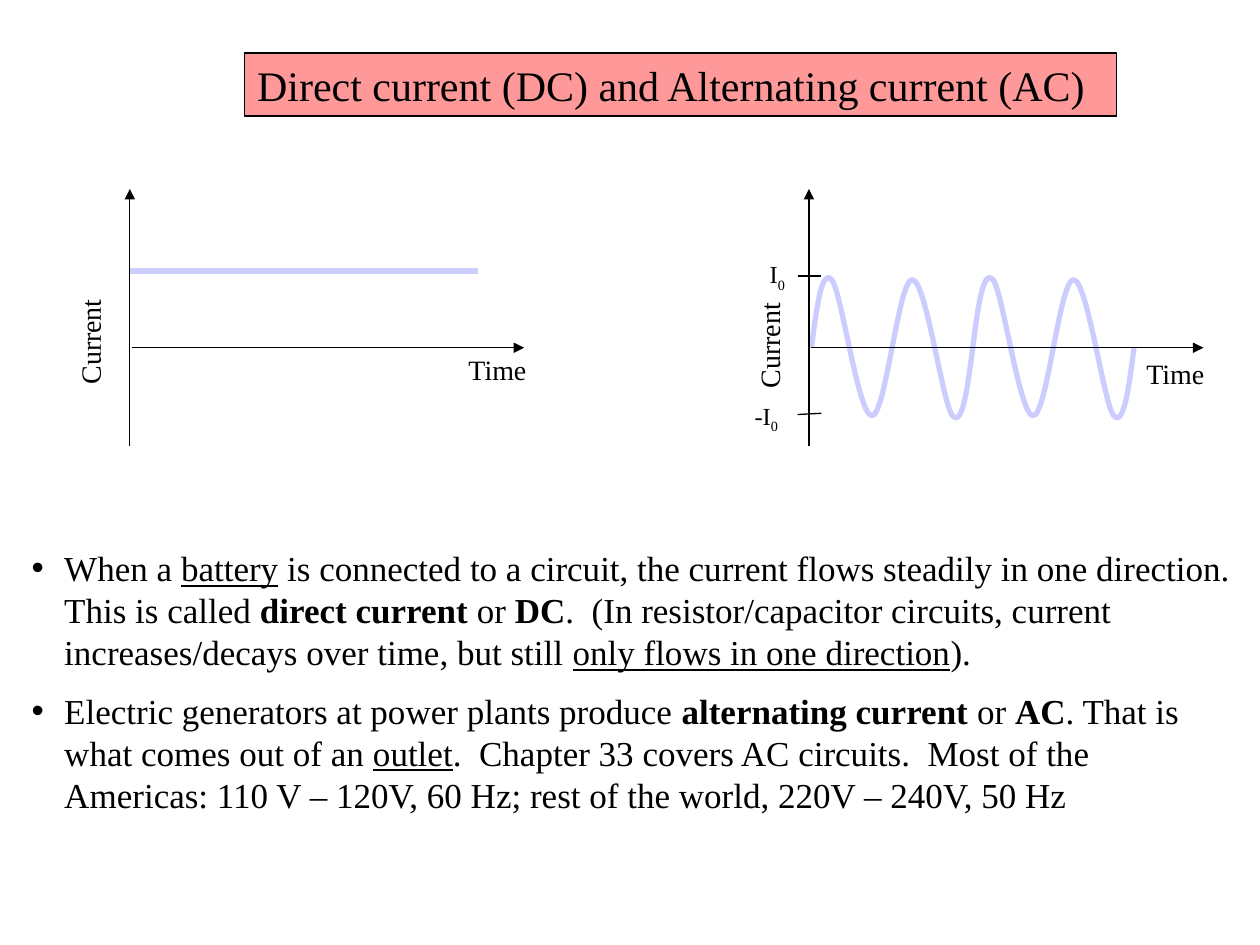
from dataclasses import dataclass
from typing import Any

import lxml.etree
import pptx
import pptx.dml.color
import pptx.enum.shapes
import pptx.enum.text
import pptx.oxml.ns
import pptx.util

Inches = pptx.util.Inches
Pt = pptx.util.Pt
qn = pptx.oxml.ns.qn

BLACK = pptx.dml.color.RGBColor(0x00, 0x00, 0x00)
PINK = pptx.dml.color.RGBColor(0xFF, 0x99, 0x99)
LAVENDER = pptx.dml.color.RGBColor(0xCC, 0xCC, 0xFF)

FONT = "Times New Roman"
ZERO_Y = 2.76
PERIOD = 1.28
WAVE_CONTROLS = (
    (0.04, -0.31), (0.08, -0.63), (0.16, -0.54),
    (0.24, -0.45), (0.37, 0.54), (0.48, 0.54),
    (0.59, 0.54), (0.69, -0.54), (0.80, -0.54),
    (0.91, -0.54), (1.04, 0.45), (1.12, 0.54),
    (1.20, 0.63), (1.24, 0.31), (1.28, 0),
)


@dataclass
class Span:
    text: str
    format: dict[str, Any]
    subscript: bool = False


@dataclass
class Graph:
    axis_x: float
    time_x: float
    label_shift: float


@dataclass
class Level:
    sign: str
    tick_start_y: float
    tick_end_y: float
    label_x: float
    label_y: float
    label_width: float


PLAIN: dict[str, Any] = {}
BOLD = {"bold": True}
UNDERLINED = {"underline": True}

DIRECT = Graph(1.03, 3.62, 0)
ALTERNATING = Graph(6.42, 9, 0.03)
LEVELS = (
    Level("", 2.19, 2.19, 6.01, 2.01, 0.41),
    Level("-", 3.29, 3.28, 5.89, 3.13, 0.44),
)
TITLE = [Span("Direct current (DC) and Alternating current (AC)", PLAIN)]
BULLETS = (
    [
        Span("When a ", PLAIN),
        Span("battery", UNDERLINED),
        Span(" is connected to a circuit, the current flows steadily in one direction. "
             "This is called ", PLAIN),
        Span("direct current", BOLD),
        Span(" or ", PLAIN),
        Span("DC", BOLD),
        Span(".  (In resistor/capacitor circuits, current increases/decays over time, "
             "but still ", PLAIN),
        Span("only flows in one direction", UNDERLINED),
        Span(").", PLAIN),
    ],
    [
        Span("Electric generators at power plants produce ", PLAIN),
        Span("alternating current ", BOLD),
        Span("or ", PLAIN),
        Span("AC", BOLD),
        Span(". That is what comes out of an ", PLAIN),
        Span("outlet", UNDERLINED),
        Span(".  Chapter 33 covers AC circuits.  Most of the Americas: 110 V – 120V, "
             "60 Hz; rest of the world, 220V – 240V, 50 Hz", PLAIN),
    ],
)


def apply_format(target: Any, values: dict[str, Any]) -> None:
    for name, value in values.items():
        setattr(target, name, value)


def place(box: Any, left: float, top: float, width: float, height: float) -> None:
    apply_format(box, {"left": Inches(left), "top": Inches(top),
                       "width": Inches(width), "height": Inches(height)})
    apply_format(box.text_frame, {
        "word_wrap": True,
        "auto_size": pptx.enum.text.MSO_AUTO_SIZE.NONE,
        "vertical_anchor": pptx.enum.text.MSO_ANCHOR.TOP,
    })


def write(para: Any, spans: list[Span], size: float, space_before: float = 0) -> None:
    apply_format(para, {"alignment": pptx.enum.text.PP_ALIGN.LEFT,
                        "space_before": Pt(space_before)})
    for span in spans:
        run = para.add_run()
        run.text = span.text
        apply_format(run.font, {"name": FONT, "size": Pt(size)} | span.format)
        run.font.color.rgb = BLACK
        if span.subscript:
            run.font._element.set("baseline", "-25000")


def add_label(group: Any, spans: list[Span], left: float, top: float, width: float,
              height: float, size: float, rotation: float = 0) -> None:
    box = group.shapes.add_textbox(0, 0, 0, 0)
    place(box, left, top, width, height)
    box.rotation = rotation
    write(box.text_frame.paragraphs[0], spans, size)


def add_line(group: Any, start: tuple[float, float], end: tuple[float, float],
             color: Any = BLACK, width: float = 0.75, arrow: bool = False) -> None:
    line = group.shapes.add_connector(
        pptx.enum.shapes.MSO_CONNECTOR.STRAIGHT,
        *(Inches(value) for value in start + end))
    line.line.color.rgb = color
    line.line.width = Pt(width)
    if arrow:
        lxml.etree.SubElement(line.line._get_or_add_ln(), qn("a:tailEnd"), type="triangle")
    lxml.etree.SubElement(line._element.spPr, qn("a:effectLst"))


def bend_segments(shape: Any) -> None:
    segments = list(shape._element.iter(qn("a:lnTo")))
    for index in range(0, len(segments), 3):
        curve = lxml.etree.SubElement(segments[index].getparent(), qn("a:cubicBezTo"))
        for segment in segments[index:index + 3]:
            curve.append(segment[0])
            segment.getparent().remove(segment)


def add_wave(group: Any, left: float) -> None:
    builder = group.shapes.build_freeform(Inches(left), Inches(ZERO_Y))
    builder.add_line_segments(
        [(Inches(left + x), Inches(ZERO_Y + y)) for x, y in WAVE_CONTROLS], close=False)
    wave = builder.convert_to_shape()
    bend_segments(wave)
    wave.shadow.inherit = False
    wave.fill.background()
    wave.line.color.rgb = LAVENDER
    wave.line.width = Pt(3)


def add_axes(group: Any, graph: Graph) -> None:
    x = graph.axis_x
    add_line(group, (x + 0.02, ZERO_Y), (x + 3.13, ZERO_Y), arrow=True)
    add_line(group, (x, 3.54), (x, 1.5), arrow=True)
    add_label(group, [Span("Time", PLAIN)], graph.time_x, 2.75 + graph.label_shift,
              0.74, 0.37, 16)
    add_label(group, [Span("Current", PLAIN)], x - 0.81, 2.47 + graph.label_shift,
              0.99, 0.37, 16, 270)


def add_level(group: Any, level: Level) -> None:
    x = ALTERNATING.axis_x
    add_line(group, (x - 0.09, level.tick_start_y), (x + 0.1, level.tick_end_y))
    add_label(group, [Span(level.sign + "I", PLAIN), Span("0", PLAIN, True)],
              level.label_x, level.label_y, level.label_width, 0.33, 14)


def main() -> None:
    deck = pptx.Presentation()
    apply_format(deck, {"slide_width": Inches(10), "slide_height": Inches(7.5)})
    page = deck.slides.add_slide(deck.slide_layouts[1])
    title, body = page.placeholders

    place(title, 1.94, 0.42, 6.92, 0.5)
    title.fill.solid()
    title.fill.fore_color.rgb = PINK
    title.line.color.rgb = BLACK
    title.line.width = Pt(0.75)
    write(title.text_frame.paragraphs[0], TITLE, 24)

    alternating = page.shapes.add_group_shape()
    for cycle in range(2):
        add_wave(alternating, ALTERNATING.axis_x + 0.02 + cycle * PERIOD)
    add_axes(alternating, ALTERNATING)
    for level in LEVELS:
        add_level(alternating, level)

    direct = page.shapes.add_group_shape()
    add_axes(direct, DIRECT)
    add_line(direct, (DIRECT.axis_x, 2.15), (3.79, 2.15), LAVENDER, 3)

    place(body, 0.15, 4.29, 9.72, 2.29)
    for index, spans in enumerate(BULLETS):
        para = body.text_frame.add_paragraph() if index else body.text_frame.paragraphs[0]
        write(para, spans, 20, 9.5 * index)
        properties = para._p.get_or_add_pPr()
        properties.set("marL", str(Inches(0.26)))
        properties.set("indent", str(Inches(-0.26)))
        lxml.etree.SubElement(properties, qn("a:buChar"), char="•")

    deck.save("out.pptx")


if __name__ == "__main__":
    main()
